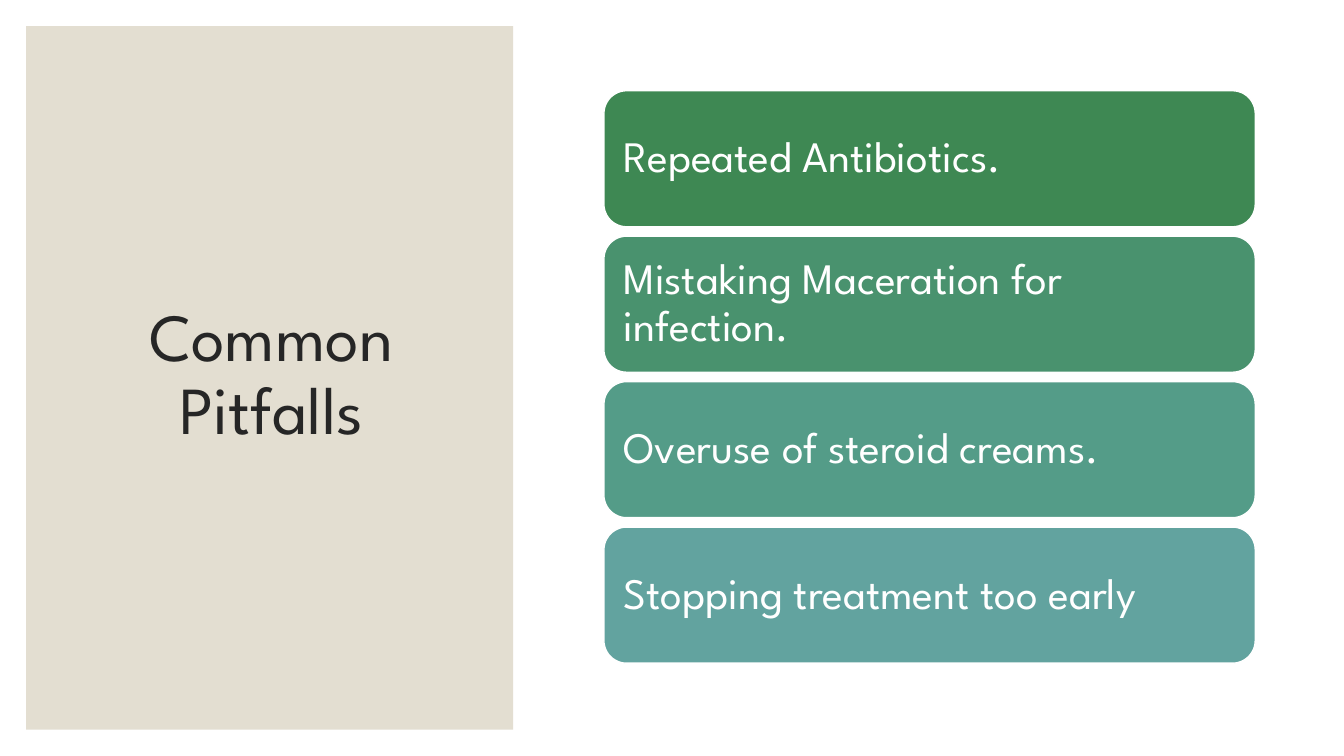
"""Build the Common Pitfalls slide: a title panel beside four stacked bars."""
import pptx
import pptx.util
import pptx.dml.color
import pptx.enum.shapes
import pptx.enum.text

TITLE = "Common Pitfalls"
BARS = [
    ("Repeated Antibiotics.", "green"),
    ("Mistaking Maceration for infection.", "jade"),
    ("Overuse of steroid creams.", "sea"),
    ("Stopping treatment too early", "teal"),
]
COLORS = {
    "white": "FFFFFF", "sand": "E3DED1", "ink": "262626",
    "green": "3E8853", "jade": "49926E", "sea": "549C88", "teal": "62A39F",
}
FONT = "League Spartan"
WIDE, HIGH = 13.33, 7.5
EDGE = 0.26
PANELS = [
    ((0, 0, WIDE, HIGH), "white"),
    ((EDGE, EDGE, 4.83, HIGH - 2 * EDGE), "sand"),
]
HEAD = (0.63, 0.61, 4.12, 6.24)
LEFT, TOP, WIDTH, TALL, STEP = 5.99, 0.9, 6.46, 1.33, 1.443
TALL = 1.35
INSET = 0.13

Kind = pptx.enum.shapes.MSO_SHAPE
Align = pptx.enum.text.PP_ALIGN
Inch = pptx.util.Inches


def color(name):
    return pptx.dml.color.RGBColor.from_string(COLORS[name])


def block(slide, kind, box, fill):
    shape = slide.shapes.add_shape(kind, *map(Inch, box))
    shape.shadow.inherit = False
    shape.fill.solid()
    shape.fill.fore_color.rgb = color(fill)
    shape.line.fill.background()
    return shape


def write(shape, text, size, ink, align):
    frame = shape.text_frame
    frame.text = text
    frame.word_wrap = True
    frame.auto_size = pptx.enum.text.MSO_AUTO_SIZE.NONE
    frame.vertical_anchor = pptx.enum.text.MSO_ANCHOR.MIDDLE
    para = frame.paragraphs[0]
    para.alignment = align
    para.line_spacing = 0.9
    font = para.runs[0].font
    font.name, font.size = FONT, pptx.util.Pt(size)
    font.color.rgb = color(ink)
    return frame


def main():
    deck = pptx.Presentation()
    deck.slide_width, deck.slide_height = Inch(WIDE), Inch(HIGH)
    slide = deck.slides.add_slide(deck.slide_layouts[5])

    for box, fill in PANELS:
        block(slide, Kind.RECTANGLE, box, fill)

    title = slide.shapes.title
    title.left, title.top, title.width, title.height = map(Inch, HEAD)
    write(title, TITLE, 48, "ink", Align.CENTER)
    title.element.getparent().append(title.element)

    for row, (text, fill) in enumerate(BARS):
        box = (LEFT, TOP + row * STEP, WIDTH, TALL)
        bar = block(slide, Kind.ROUNDED_RECTANGLE, box, fill)
        bar.line.color.rgb = color("white")
        bar.line.width = pptx.util.Pt(1)
        frame = write(bar, text, 31, "white", Align.LEFT)
        frame.margin_left = frame.margin_right = Inch(INSET)
        frame.margin_top = frame.margin_bottom = Inch(INSET)

    deck.save("out.pptx")


if __name__ == "__main__":
    main()
